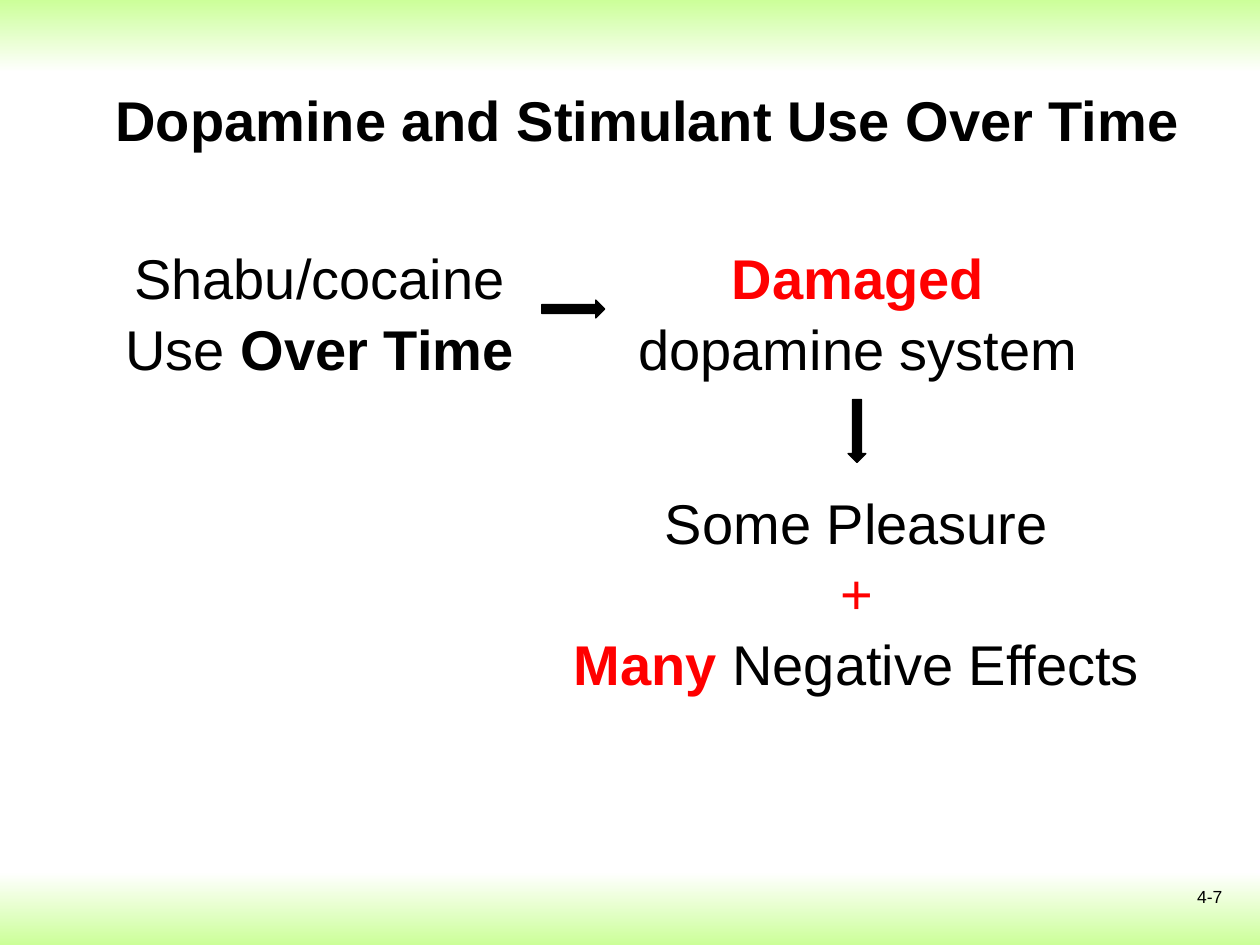
"""Build the slide on dopamine and stimulant use over time."""
import dataclasses
import typing

import pptx
import pptx.dml.color
import pptx.enum.shapes
import pptx.enum.text
import pptx.util

Cm = pptx.util.Cm
Align = pptx.enum.text.PP_ALIGN
Anchor = pptx.enum.text.MSO_ANCHOR
Preset = pptx.enum.shapes.MSO_SHAPE


def tint(code: str) -> pptx.dml.color.RGBColor:
    return pptx.dml.color.RGBColor.from_string(code)


@dataclasses.dataclass(frozen=True)
class Theme:
    font: str = "Arial"
    ink: str = "000000"
    alert: str = "FF0000"
    paper: str = "FFFFFF"
    lime: str = "CCFF99"
    large: int = 32
    small: int = 10


THEME = Theme()


class Box(typing.NamedTuple):
    left: float
    top: float
    width: float
    height: float

    def size(self) -> list:
        return [Cm(side) for side in self]


class Run(typing.NamedTuple):
    text: str
    color: str = THEME.ink
    bold: bool = False
    split: bool = False


class Label(typing.NamedTuple):
    box: Box
    runs: list[Run]
    align: Align = Align.CENTER
    anchor: Anchor = Anchor.TOP
    size: int = THEME.large
    pitch: float = 1.05


class Band(typing.NamedTuple):
    top: float
    stops: tuple[str, str]


class Arrow(typing.NamedTuple):
    box: Box
    turn: int


WIDE, HIGH, DEEP = 25.4, 19.05, 1.47

BANDS = [
    Band(HIGH - DEEP, (THEME.paper, THEME.lime)),
    Band(0, (THEME.lime, THEME.paper)),
]

LABELS = [
    Label(Box(18.97, 17.73, 5.92, 1.32), [Run("4-7")],
          align=Align.RIGHT, size=THEME.small, pitch=1),
    Label(Box(2.08, 0.81, 22.91, 3.18),
          [Run("Dopamine and Stimulant Use Over Time", bold=True)],
          align=Align.LEFT, anchor=Anchor.MIDDLE, pitch=1),
    Label(Box(12.22, 4.72, 10.16, 3),
          [Run("Damaged", THEME.alert, True), Run(" dopamine system")]),
    Label(Box(1.9, 4.72, 9.09, 3),
          [Run("Shabu/cocaine Use "), Run("Over Time", bold=True)]),
    Label(Box(10.03, 9.65, 14.48, 4.37),
          [Run("Some Pleasure", split=True),
           Run("+", THEME.alert, split=True),
           Run("Many", THEME.alert, True), Run(" Negative Effects")]),
]

ARROWS = [
    Arrow(Box(10.92, 6.05, 1.27, 0.36), 0),
    Arrow(Box(16.64, 8.51, 1.27, 0.36), 90),
]


def apply(target: typing.Any, values: dict[str, typing.Any]) -> None:
    for name, value in values.items():
        setattr(target, name, value)


def draw_band(shapes: typing.Any, band: Band) -> None:
    box = Box(0, band.top, WIDE, DEEP)
    shape = shapes.add_shape(Preset.RECTANGLE, *box.size())
    shape.shadow.inherit = False
    shape.line.fill.background()
    shape.fill.gradient()
    shape.fill.gradient_angle = 270
    for place, (stop, code) in enumerate(zip(shape.fill.gradient_stops, band.stops)):
        apply(stop, {"position": place})
        stop.color.rgb = tint(code)


def draw_label(shapes: typing.Any, label: Label) -> None:
    frame = shapes.add_textbox(*label.box.size()).text_frame
    apply(frame, {"word_wrap": True, "vertical_anchor": label.anchor})
    para = frame.paragraphs[0]
    apply(para, {"alignment": label.align, "line_spacing": label.pitch})
    for part in label.runs:
        run = para.add_run()
        run.text = part.text
        apply(run.font, {"name": THEME.font, "bold": part.bold,
                         "size": pptx.util.Pt(label.size)})
        run.font.color.rgb = tint(part.color)
        if part.split:
            para.add_line_break()


def draw_arrow(shapes: typing.Any, arrow: Arrow) -> None:
    shape = shapes.add_shape(Preset.RIGHT_ARROW, *arrow.box.size())
    shape.rotation = arrow.turn
    shape.shadow.inherit = False
    for fill in (shape.fill, shape.line.fill):
        fill.solid()
        fill.fore_color.rgb = tint(THEME.ink)
    shape.line.width = pptx.util.Pt(0.75)


def main() -> None:
    deck = pptx.Presentation()
    apply(deck, {"slide_width": Cm(WIDE), "slide_height": Cm(HIGH)})
    slide = deck.slides.add_slide(deck.slide_layouts[6])
    slide.background.fill.solid()
    slide.background.fill.fore_color.rgb = tint(THEME.paper)
    for draw, items in ((draw_band, BANDS), (draw_label, LABELS), (draw_arrow, ARROWS)):
        for item in items:
            draw(slide.shapes, item)
    deck.save("out.pptx")


if __name__ == "__main__":
    main()
